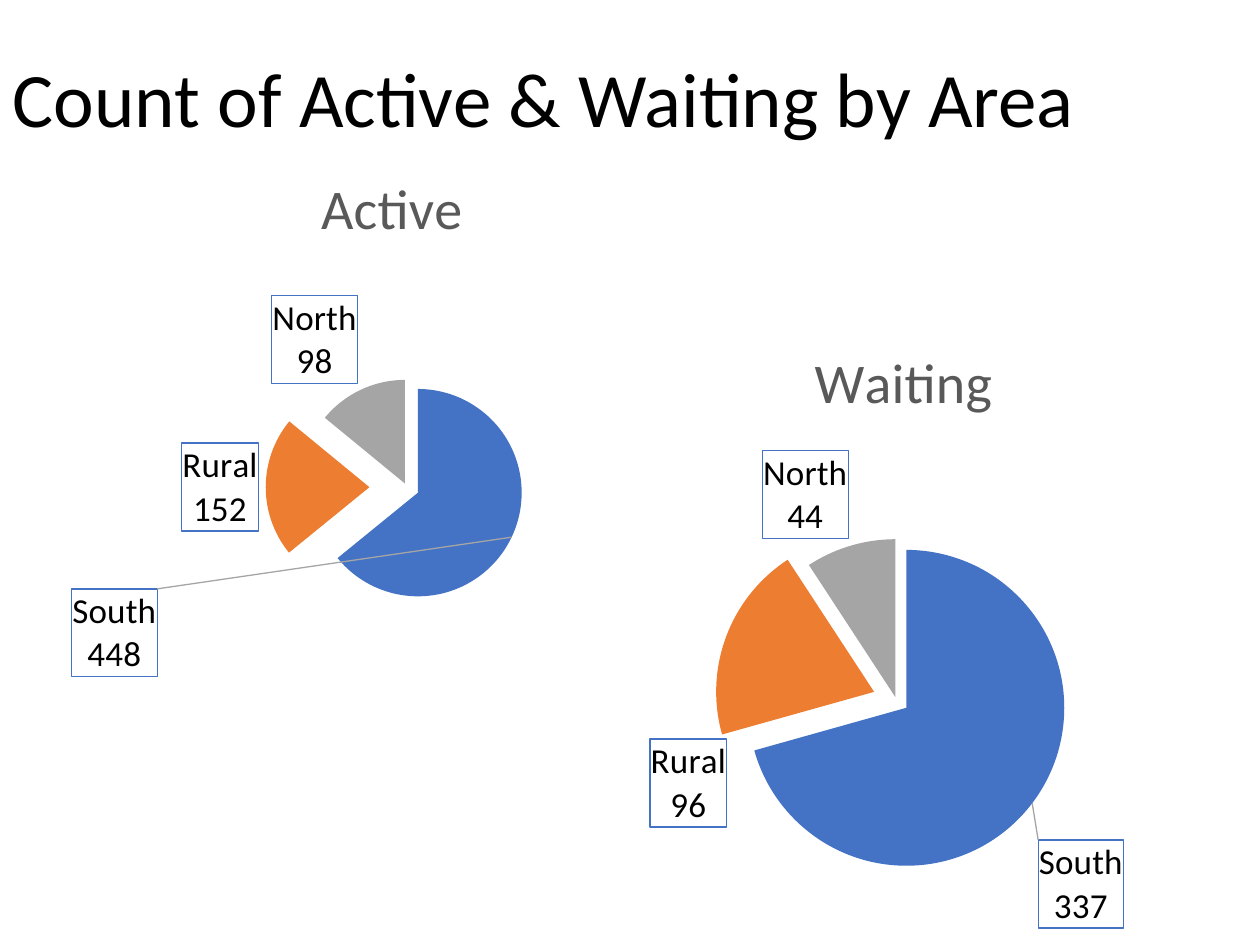
from dataclasses import dataclass, field

from lxml.etree import SubElement
from pptx import Presentation
from pptx.chart.data import CategoryChartData
from pptx.dml.color import RGBColor
from pptx.enum.chart import XL_CHART_TYPE as ChartType
from pptx.enum.text import MSO_ANCHOR as Anchor, PP_ALIGN as Align
from pptx.oxml import parse_xml
from pptx.oxml.ns import nsdecls, qn
from pptx.util import Cm, Pt

FONT = "Calibri"
COLORS = {
    "text": "000000",
    "heading": "595959",
    "box": "4472C4",
    "leader": "A5A5A5",
    "South": "4472C4",
    "Rural": "ED7D31",
    "North": "A5A5A5",
}
AREAS = ("South", "Rural", "North")
LABEL_SIZE = 20


@dataclass
class Pie:
    name: str
    box: tuple[float, float, float, float]  # left, top, width, height in cm
    values: tuple[int, int, int]
    explosions: tuple[int, int, int]
    title_at: tuple[float, float]  # fractions of the chart
    plot_at: tuple[float, float, float, float]
    label_shifts: dict[int, tuple[float, float]]
    label_texts: dict[int, tuple[str, ...]] = field(default_factory=dict)


PIES = (
    Pie("Active", (0, 2.87, 16.08, 10.87), (447, 152, 98), (12, 36, 4),
        (0.39, 0.03), (0.38, 0.44, 0.26, 0.4),
        {0: (-0.56, 0.09)}, {0: ("South", "448")}),
    Pie("Waiting", (10.59, 6.07, 14.81, 12.98), (337, 96, 44), (8, 15, 2),
        (0.38, 0.05), (0.29, 0.37, 0.43, 0.5),
        {0: (0, 0.05), 1: (0.01, 0.3)}),
)


def write(tf, text: str, *, size: float, color: str, align=None, spacing=None) -> None:
    tf.text = text
    p = tf.paragraphs[0]
    p.alignment = align
    p.line_spacing = spacing
    font = p.runs[0].font
    font.name, font.size, font.bold = FONT, Pt(size), False
    font.color.rgb = RGBColor.from_string(COLORS[color])


def layout_xml(*numbers: float, edge: bool = True) -> str:
    """Manual layout; without edge the numbers are shifts from the usual place."""
    modes = '<c:xMode val="edge"/><c:yMode val="edge"/>' if edge else ""
    target = '<c:layoutTarget val="inner"/>' if len(numbers) == 4 else ""
    sizes = "".join(f'<c:{tag} val="{n}"/>' for tag, n in zip("xywh", numbers))
    return (f'<c:layout {nsdecls("c")}><c:manualLayout>{target}{modes}{sizes}'
            "</c:manualLayout></c:layout>")


def set_layout(parent, index: int, *numbers: float) -> None:
    for old in parent.findall(qn("c:layout")):
        parent.remove(old)
    parent.insert(index, parse_xml(layout_xml(*numbers)))


def fill_xml(color: str) -> str:
    return f'<a:solidFill><a:srgbClr val="{COLORS[color]}"/></a:solidFill>'


def labels_xml(pie: Pie) -> str:
    """Boxed labels of area and count, with shifts and fixed texts where given."""
    def font(tag: str) -> str:
        return (f'<a:{tag} sz="{LABEL_SIZE * 100}" b="0">{fill_xml("text")}'
                f'<a:latin typeface="{FONT}"/></a:{tag}>')

    style = (
        f'<c:spPr><a:noFill/><a:ln w="9525">{fill_xml("box")}</a:ln></c:spPr>'
        f'<c:txPr><a:bodyPr/><a:p><a:pPr>{font("defRPr")}</a:pPr></a:p></c:txPr>'
        '<c:dLblPos val="bestFit"/><c:showLegendKey val="0"/><c:showVal val="1"/>'
        '<c:showCatName val="1"/><c:showSerName val="0"/><c:showPercent val="0"/>'
        '<c:showBubbleSize val="0"/><c:separator>\n</c:separator>'
    )
    points = ""
    for i, shift in pie.label_shifts.items():
        lines = "".join(f'<a:p><a:r>{font("rPr")}<a:t>{line}</a:t></a:r></a:p>'
                        for line in pie.label_texts.get(i, ()))
        tx = f"<c:tx><c:rich><a:bodyPr/>{lines}</c:rich></c:tx>" if lines else ""
        points += (f'<c:dLbl><c:idx val="{i}"/>{layout_xml(*shift, edge=False)}'
                   f"{tx}{style}</c:dLbl>")
    return (f'<c:dLbls {nsdecls("c", "a")}>{points}{style}<c:showLeaderLines val="1"/>'
            f'<c:leaderLines><c:spPr><a:ln w="9525">{fill_xml("leader")}</a:ln></c:spPr>'
            "</c:leaderLines></c:dLbls>")


def add_pie(slide, pie: Pie) -> None:
    data = CategoryChartData()
    data.categories = AREAS
    data.add_series("Series 1", pie.values)
    frame = slide.shapes.add_chart(ChartType.PIE, *map(Cm, pie.box), data)
    chart = frame.chart
    chart.has_legend = False
    chart.font.name, chart.font.size = FONT, Pt(10)
    chart.font.color.rgb = RGBColor.from_string(COLORS["text"])
    write(chart.chart_title.text_frame, pie.name, size=32, color="heading")

    root = chart.element
    set_layout(root.find(".//" + qn("c:title")), 1, *pie.title_at)
    set_layout(root.find(".//" + qn("c:plotArea")), 0, *pie.plot_at)

    series = chart.plots[0].series[0]
    for i, area in enumerate(AREAS):
        fill = series.points[i].format.fill
        fill.solid()
        fill.fore_color.rgb = RGBColor.from_string(COLORS[area])
    ser = root.find(".//" + qn("c:ser"))
    for point, amount in zip(ser.findall(qn("c:dPt")), pie.explosions):
        explosion = SubElement(point, qn("c:explosion"), val=str(amount))
        point.find(qn("c:spPr")).addprevious(explosion)
    ser.find(qn("c:cat")).addprevious(parse_xml(labels_xml(pie)))


def main() -> None:
    prs = Presentation()
    prs.slide_width, prs.slide_height = Cm(25.4), Cm(19.05)
    s = prs.slides.add_slide(prs.slide_layouts[5])
    title = s.shapes.title
    title.left, title.top, title.width, title.height = map(Cm, (0, 0, 25.4, 4.14))
    write(title.text_frame, "Count of Active & Waiting by Area",
          size=44, color="text", align=Align.LEFT, spacing=0.9)
    title.text_frame.vertical_anchor = Anchor.MIDDLE
    for pie in PIES:
        add_pie(s, pie)
    prs.save("out.pptx")


if __name__ == "__main__":
    main()
